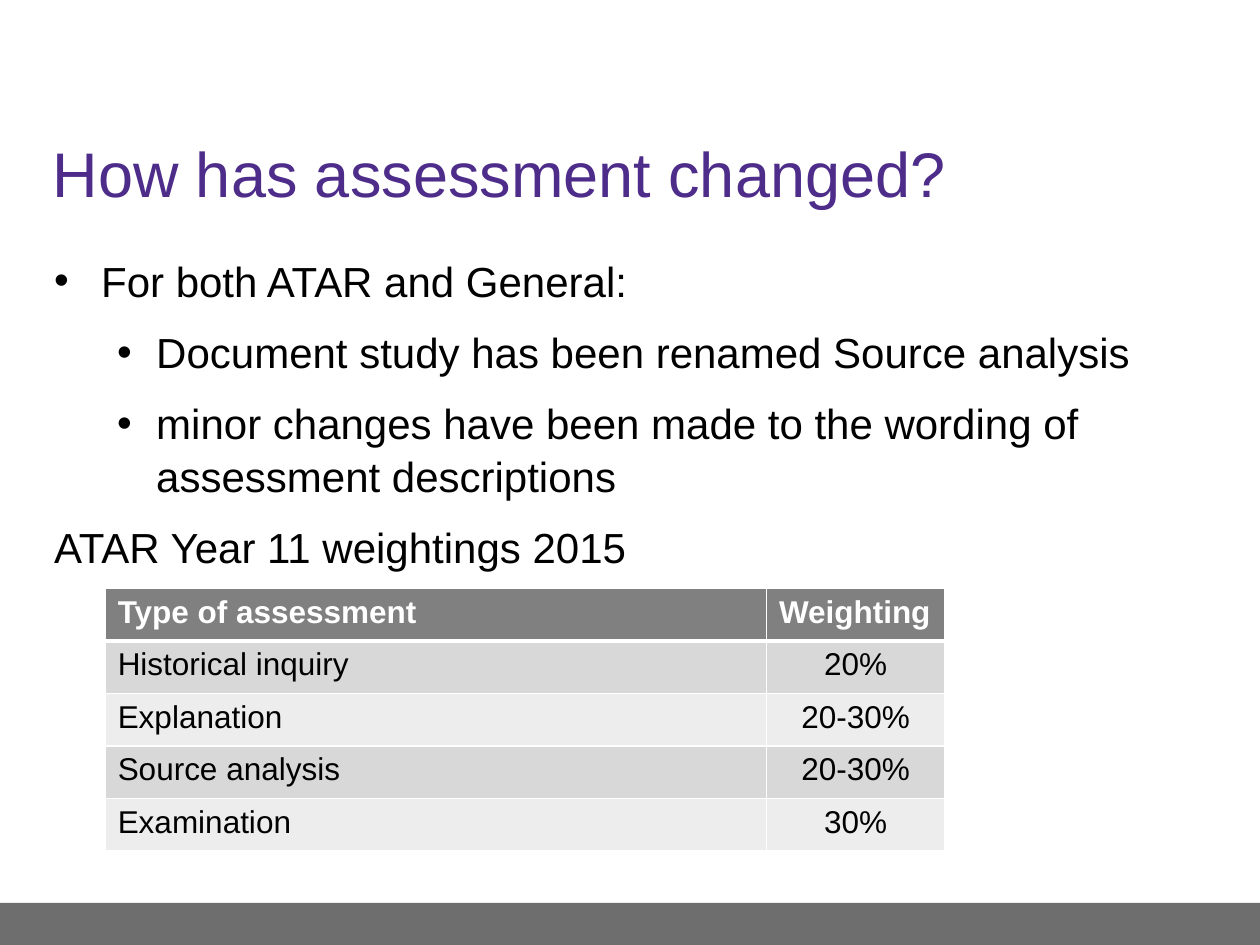
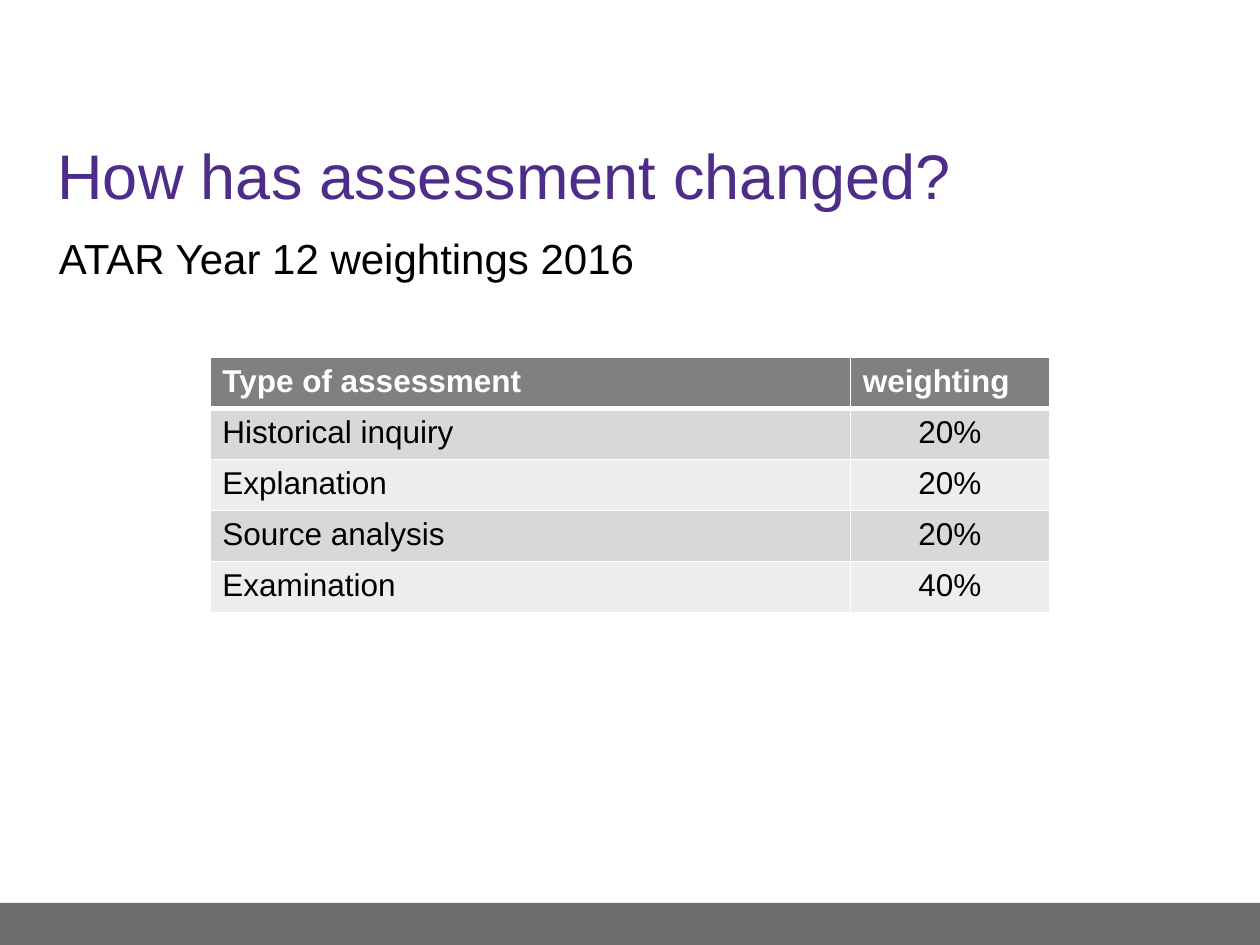
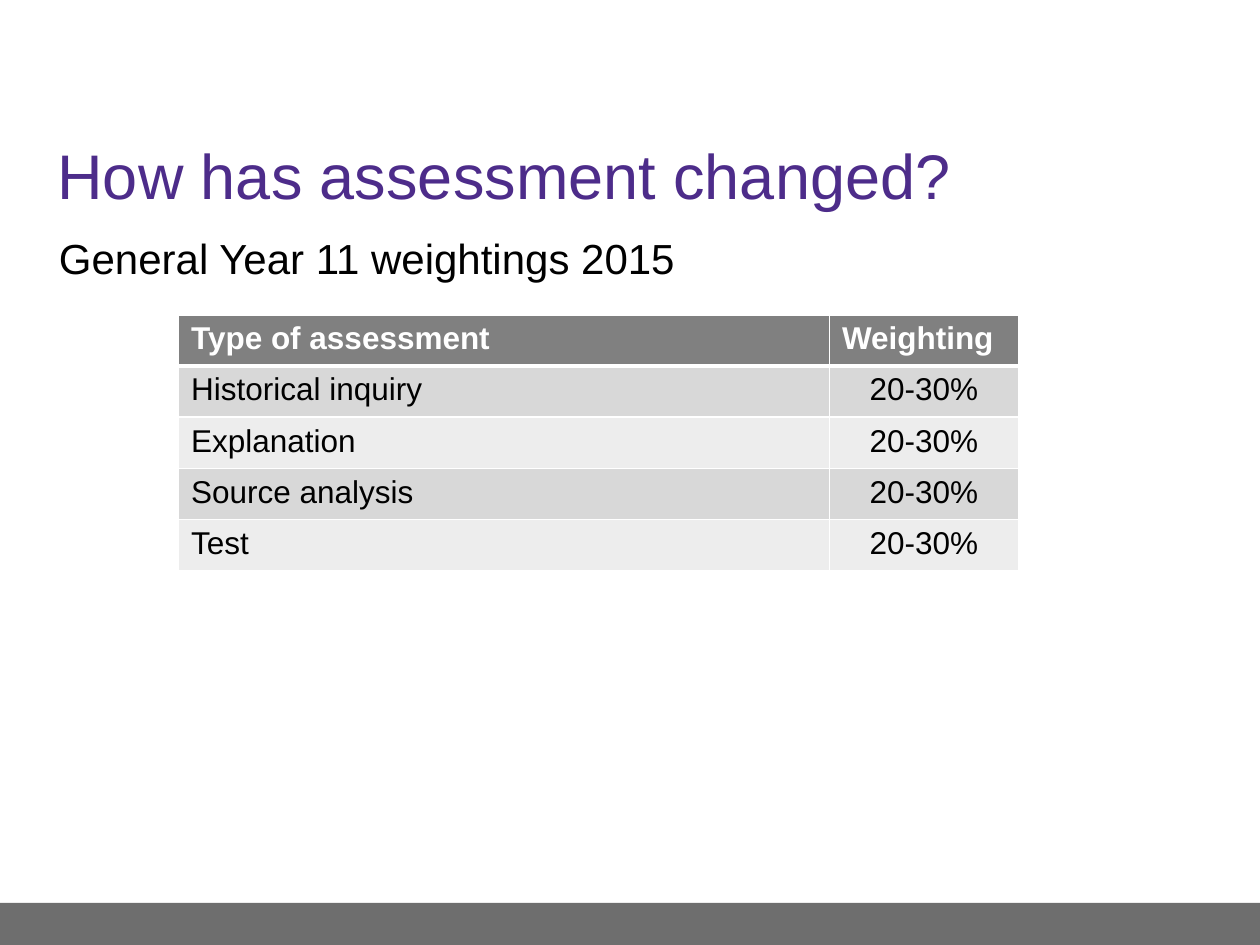
from dataclasses import dataclass

from lxml.etree import SubElement
from pptx import Presentation
from pptx.dml.color import RGBColor
from pptx.enum.shapes import MSO_SHAPE as Shape
from pptx.enum.text import MSO_ANCHOR as Anchor, PP_ALIGN as Align
from pptx.oxml.ns import qn
from pptx.util import Cm, Pt

FONT = "Arial"
PURPLE, BLACK, WHITE = "4D2C8A", "000000", "FFFFFF"
FOOTER_GREY, HEADER_GREY = "6E6E6E", "808080"
BAND_GREYS = ("D8D8D8", "EDEDED")
SLIDE_WIDTH, SLIDE_HEIGHT = 25.4, 19.05
FOOTER_HEIGHT = 0.85
TABLE_WIDTH = 16.93
TITLE = "How has assessment changed?"


@dataclass(frozen=True)
class Box:
    left: float
    top: float
    width: float
    height: float

    def lengths(self) -> tuple:
        return tuple(Cm(n) for n in (self.left, self.top, self.width, self.height))


@dataclass(frozen=True)
class Line:
    text: str
    level: int = 0
    margin: float = 0
    hanging: float = 0


@dataclass(frozen=True)
class WeightingTable:
    left: float
    top: float
    row_height: float
    weighting_width: float
    rows: tuple


@dataclass(frozen=True)
class AssessmentSlide:
    title_box: Box
    body_box: Box
    lines: tuple
    table: WeightingTable
    space_after: float = 0


TITLE_BOX = Box(0.91, 2.34, 23.75, 2.34)
BODY_BOX = Box(0.94, 4.52, 23.7, 12.8)

SLIDES = (
    AssessmentSlide(
        Box(0.81, 2.31, 23.75, 2.34),
        Box(0.84, 4.98, 23.7, 12.8),
        (
            Line("For both ATAR and General:", margin=0.95, hanging=0.95),
            Line("Document study has been renamed Source analysis", 1, 2.06, 0.79),
            Line("minor changes have been made to the wording of assessment descriptions",
                 1, 2.06, 0.79),
            Line("ATAR Year 11 weightings 2015"),
        ),
        WeightingTable(2.12, 11.86, 1.06, 3.6, (
            ("Type of assessment", "Weighting"),
            ("Historical inquiry", "20%"),
            ("Explanation", "20-30%"),
            ("Source analysis", "20-30%"),
            ("Examination", "30%"),
        )),
        space_after=6,
    ),
    AssessmentSlide(
        TITLE_BOX, BODY_BOX,
        (Line("ATAR Year 12 weightings 2016"),),
        WeightingTable(4.23, 7.2, 1.03, 4.02, (
            ("Type of assessment", "weighting"),
            ("Historical inquiry", "20%"),
            ("Explanation", "20%"),
            ("Source analysis", "20%"),
            ("Examination", "40%"),
        )),
    ),
    AssessmentSlide(
        TITLE_BOX, BODY_BOX,
        (Line("General Year 11 weightings 2015"),),
        WeightingTable(3.6, 6.35, 1.03, 3.81, (
            ("Type of assessment", "Weighting"),
            ("Historical inquiry", "20-30%"),
            ("Explanation", "20-30%"),
            ("Source analysis", "20-30%"),
            ("Test", "20-30%"),
        )),
    ),
)


def color(value: str) -> RGBColor:
    return RGBColor.from_string(value)


def write(paragraph, text: str, *, size: float, fill: str = BLACK,
          bold: bool = False, align=Align.LEFT) -> None:
    paragraph.alignment = align
    run = paragraph.add_run()
    run.text = text
    run.font.name = FONT
    run.font.size = Pt(size)
    run.font.bold = bold
    run.font.color.rgb = color(fill)


def add_text_frame(slide, box: Box, anchor=Anchor.TOP):
    frame = slide.shapes.add_textbox(*box.lengths()).text_frame
    frame.word_wrap = True
    frame.vertical_anchor = anchor
    return frame


def add_footer(slide) -> None:
    box = Box(0, SLIDE_HEIGHT - FOOTER_HEIGHT, SLIDE_WIDTH, FOOTER_HEIGHT)
    band = slide.shapes.add_shape(Shape.RECTANGLE, *box.lengths())
    band.shadow.inherit = False
    band.fill.solid()
    band.fill.fore_color.rgb = color(FOOTER_GREY)
    band.line.fill.background()


def add_bullet(paragraph, line: Line) -> None:
    properties = paragraph._p.get_or_add_pPr()
    properties.set("marL", str(Cm(line.margin)))
    properties.set("indent", str(-Cm(line.hanging)))
    SubElement(properties, qn("a:buFont"), typeface=FONT)
    SubElement(properties, qn("a:buChar"), char="•")


def add_body(slide, box: Box, lines: tuple, space_after: float) -> None:
    frame = add_text_frame(slide, box)
    for index, line in enumerate(lines):
        paragraph = frame.add_paragraph() if index else frame.paragraphs[0]
        paragraph.level = line.level
        if line.hanging:
            add_bullet(paragraph, line)
        paragraph.line_spacing = 1.04
        if index:
            paragraph.space_before = Pt(4.8)
        paragraph.space_after = Pt(space_after)
        write(paragraph, line.text, size=24)


def set_borders(cell, **widths: float) -> None:
    """Draw white cell borders; widths in points are keyed L, R, T and B."""
    properties = cell._tc.get_or_add_tcPr()
    for side, width in widths.items():
        border = SubElement(properties, qn(f"a:ln{side}"), w=str(Pt(width)))
        fill = SubElement(border, qn("a:solidFill"))
        SubElement(fill, qn("a:srgbClr"), val=WHITE)


def add_weightings(slide, weightings: WeightingTable) -> None:
    rows = weightings.rows
    box = Box(weightings.left, weightings.top, TABLE_WIDTH,
              weightings.row_height * len(rows))
    table = slide.shapes.add_table(len(rows), 2, *box.lengths()).table
    table.columns[0].width = Cm(TABLE_WIDTH - weightings.weighting_width)
    table.columns[1].width = Cm(weightings.weighting_width)
    for row_index, row in enumerate(rows):
        header = row_index == 0
        table.rows[row_index].height = Cm(weightings.row_height)
        for column_index, text in enumerate(row):
            cell = table.cell(row_index, column_index)
            set_borders(cell, L=1, R=1, T=3 if row_index == 1 else 1,
                        B=3 if header else 1)
            cell.fill.solid()
            cell.fill.fore_color.rgb = color(
                HEADER_GREY if header else BAND_GREYS[(row_index - 1) % 2])
            centred = column_index == 1 and not header
            write(cell.text_frame.paragraphs[0], text, size=18, bold=header,
                  fill=WHITE if header else BLACK,
                  align=Align.CENTER if centred else Align.LEFT)


def main() -> None:
    presentation = Presentation()
    presentation.slide_width = Cm(SLIDE_WIDTH)
    presentation.slide_height = Cm(SLIDE_HEIGHT)
    blank = presentation.slide_layouts[6]
    for content in SLIDES:
        slide = presentation.slides.add_slide(blank)
        add_footer(slide)
        title = add_text_frame(slide, content.title_box, Anchor.MIDDLE)
        write(title.paragraphs[0], TITLE, size=36, fill=PURPLE)
        add_body(slide, content.body_box, content.lines, content.space_after)
        add_weightings(slide, content.table)
    presentation.save("out.pptx")


if __name__ == "__main__":
    main()
